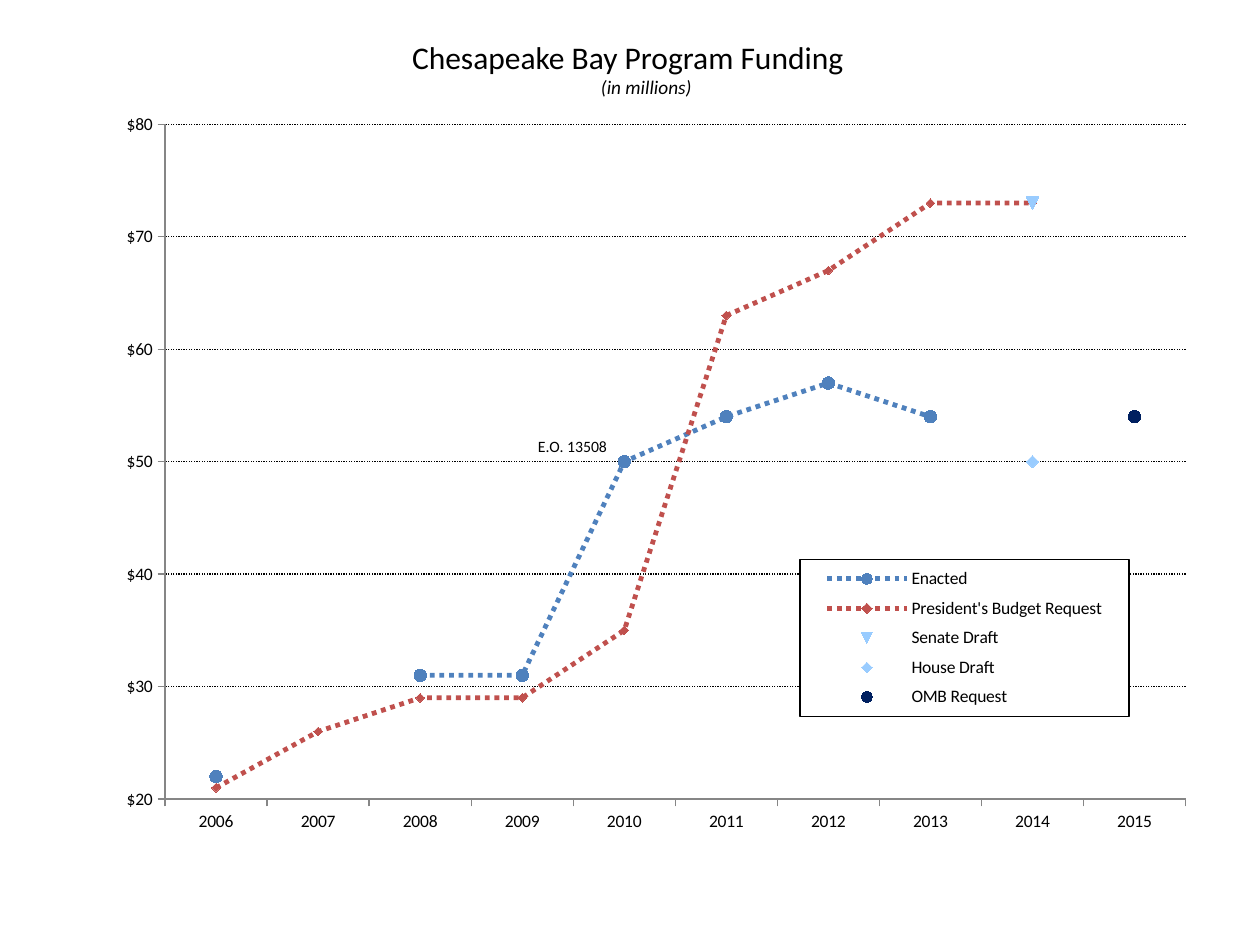
from lxml import etree
from pptx import Presentation
from pptx.chart.data import CategoryChartData
from pptx.dml.color import RGBColor
from pptx.enum.chart import XL_CHART_TYPE as ChartType, XL_LEGEND_POSITION as LegendPosition
from pptx.enum.chart import XL_MARKER_STYLE as Marker, XL_TICK_MARK as TickMark
from pptx.enum.dml import MSO_LINE
from pptx.enum.text import MSO_ANCHOR, MSO_AUTO_SIZE, PP_ALIGN
from pptx.oxml.ns import qn
from pptx.util import Inches, Pt

BLACK = RGBColor(0x00, 0x00, 0x00)
WHITE = RGBColor(0xFF, 0xFF, 0xFF)
GRAY = RGBColor(0x86, 0x86, 0x86)
BLUE = RGBColor(0x4F, 0x81, 0xBD)
RED = RGBColor(0xC0, 0x50, 0x4D)
SKY = RGBColor(0x99, 0xCC, 0xFF)
NAVY = RGBColor(0x00, 0x20, 0x60)
FONT = "Calibri"

YEARS = [str(year) for year in range(2006, 2016)]
FUNDING = {
    "Enacted": [22, None, 31, 31, 50, 54, 57, 54, None, None],
    "President's Budget Request": [21, 26, 29, 29, 35, 63, 67, 73, 73, None],
    "Senate Draft": [None] * 8 + [73, None],
    "House Draft": [None] * 8 + [50, None],
    "OMB Request": [None] * 9 + [54],
}
STYLES = [
    (BLUE, Marker.CIRCLE, 7, True),
    (RED, Marker.DIAMOND, 5, True),
    (SKY, None, 7, False),
    (SKY, Marker.DIAMOND, 7, False),
    (NAVY, Marker.CIRCLE, 7, False),
]


def set_font(font, size, italic=False):
    font.name = FONT
    font.size = Pt(size)
    font.italic = italic
    font.color.rgb = BLACK


def place(box, left, top, width, height):
    box.left, box.top = Inches(left), Inches(top)
    box.width, box.height = Inches(width), Inches(height)


def add_title(page, title, unit):
    box = page.shapes.title
    place(box, 3.17, 0.25, 3.92, 0.61)
    frame = box.text_frame
    frame.auto_size = MSO_AUTO_SIZE.NONE
    frame.vertical_anchor = MSO_ANCHOR.TOP
    frame.word_wrap = True
    frame.text = f"{title}\n{unit}"
    heading, subtitle = frame.paragraphs
    heading.alignment = PP_ALIGN.LEFT
    subtitle.alignment = PP_ALIGN.CENTER
    set_font(heading.font, 18)
    set_font(subtitle.font, 11, italic=True)
    for para in frame.paragraphs:
        para.space_before = Pt(0)


def add_note(page, text):
    box = page.shapes.add_textbox(Inches(4.17), Inches(3.42), Inches(0.92), Inches(0.33))
    box.text_frame.word_wrap = True
    para = box.text_frame.paragraphs[0]
    para.text = text
    set_font(para.font, 9)


def set_layout(parent, before, x, y, w, h, inner=False):
    for old in parent.findall(qn("c:layout")):
        parent.remove(old)
    layout = etree.Element(qn("c:layout"))
    manual = etree.SubElement(layout, qn("c:manualLayout"))
    settings = [("layoutTarget", "inner")] if inner else []
    settings += [("xMode", "edge"), ("yMode", "edge"), ("x", x), ("y", y), ("w", w), ("h", h)]
    for tag, value in settings:
        etree.SubElement(manual, qn(f"c:{tag}")).set("val", str(value))
    parent.find(qn(before)).addprevious(layout)


def frame_legend(legend):
    element = legend._element
    shape = etree.Element(qn("c:spPr"))
    line = etree.Element(qn("a:ln"), w=str(Pt(0.75)))
    for parent, color in ((shape, WHITE), (line, BLACK)):
        fill = etree.SubElement(parent, qn("a:solidFill"))
        etree.SubElement(fill, qn("a:srgbClr")).set("val", str(color))
    shape.append(line)
    element.find(qn("c:txPr")).addprevious(shape)


def style_axis(axis):
    axis.major_tick_mark = TickMark.OUTSIDE
    axis.minor_tick_mark = TickMark.NONE
    axis.format.line.color.rgb = GRAY
    set_font(axis.tick_labels.font, 10)


def style_series(series, color, symbol, size, has_line):
    series.smooth = False
    line = series.format.line
    if has_line:
        line.width = Pt(2.75)
        line.color.rgb = color
        line.dash_style = MSO_LINE.ROUND_DOT
    else:
        line.fill.background()
    marker = series.marker
    if symbol is not None:
        marker.style = symbol
    marker.size = size
    marker.format.fill.solid()
    marker.format.fill.fore_color.rgb = color
    marker.format.line.color.rgb = color


def add_funding_chart(page):
    data = CategoryChartData()
    data.categories = YEARS
    for name, values in FUNDING.items():
        data.add_series(name, values)
    chart = page.shapes.add_chart(
        ChartType.LINE_MARKERS, Inches(0.5), Inches(0.75), Inches(9), Inches(5.95), data
    ).chart
    chart.has_title = False
    set_font(chart.font, 18)
    plot = chart.plots[0]
    plot.vary_by_categories = False
    for series, style in zip(plot.series, STYLES):
        style_series(series, *style)

    style_axis(chart.category_axis)
    amounts = chart.value_axis
    style_axis(amounts)
    amounts.minimum_scale, amounts.maximum_scale = 20, 80
    amounts.major_unit = 10
    amounts.tick_labels.number_format = '"$"#,##0'
    amounts.tick_labels.number_format_is_linked = False
    grid = amounts.major_gridlines.format.line
    grid.color.rgb = BLACK
    grid.width = Pt(0.75)
    grid.dash_style = MSO_LINE.ROUND_DOT

    chart.has_legend = True
    legend = chart.legend
    legend.position = LegendPosition.RIGHT
    legend.include_in_layout = True
    set_font(legend.font, 10)
    frame_legend(legend)
    set_layout(legend._element, "c:overlay", 0.65, 0.62, 0.29, 0.21)
    plot_area = chart._chartSpace.chart.plotArea
    set_layout(plot_area, "c:lineChart", 0.09, 0.04, 0.9, 0.9, inner=True)


def main():
    deck = Presentation()
    deck.slide_width, deck.slide_height = Inches(10), Inches(7.5)
    page = deck.slides.add_slide(deck.slide_layouts[5])
    add_funding_chart(page)
    add_title(page, "Chesapeake Bay Program Funding", "(in millions)")
    add_note(page, "E.O. 13508")
    deck.save("out.pptx")


if __name__ == "__main__":
    main()
